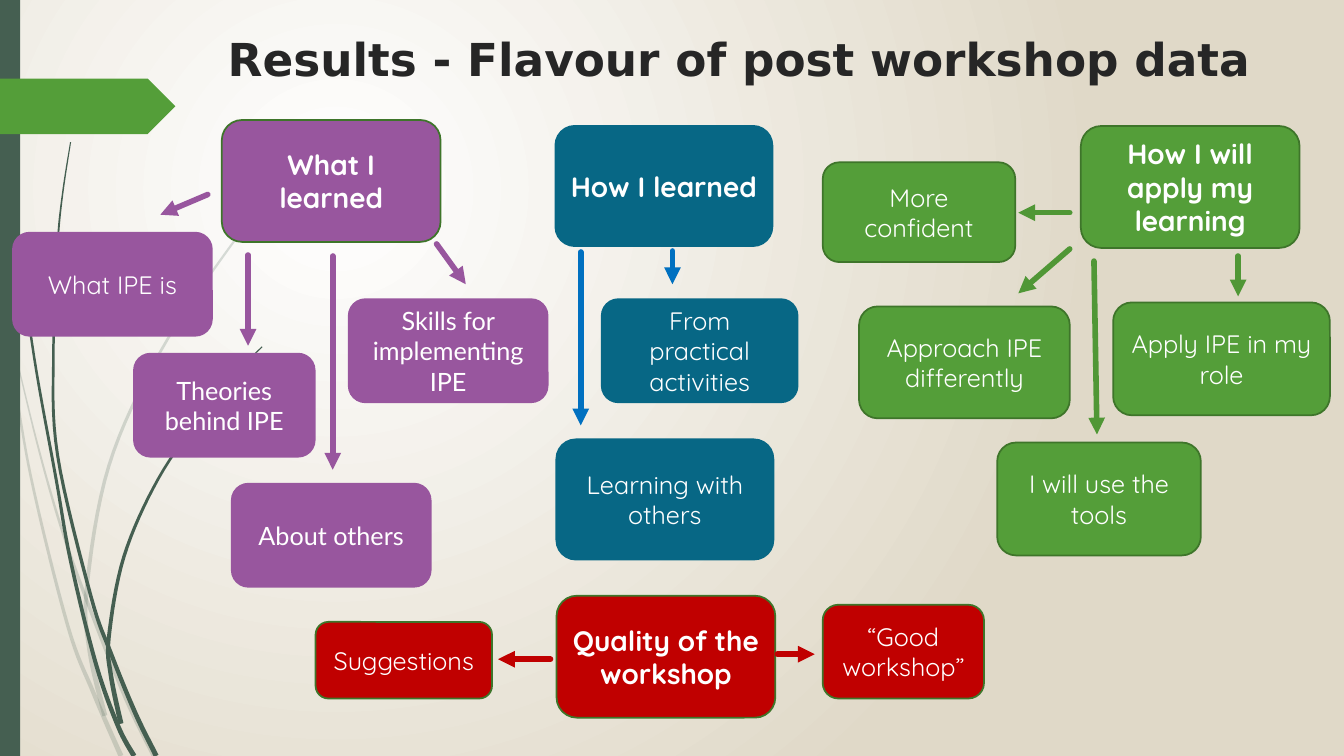
"""Build the slide that maps the themes in the post workshop data."""
from math import hypot

from lxml import etree
from pptx import Presentation
from pptx.dml.color import RGBColor
from pptx.enum.shapes import MSO_CONNECTOR, MSO_SHAPE
from pptx.enum.text import MSO_ANCHOR, PP_ALIGN
from pptx.oxml.ns import qn
from pptx.util import Inches, Pt

ROUND = MSO_SHAPE.ROUNDED_RECTANGLE
RECT = MSO_SHAPE.RECTANGLE
TAG = MSO_SHAPE.PENTAGON
LINE = MSO_CONNECTOR.STRAIGHT
TOP, MIDDLE = MSO_ANCHOR.TOP, MSO_ANCHOR.MIDDLE
CENTER = PP_ALIGN.CENTER

PURPLE, TEAL, GREEN, RED = "98569E", "076785", "549E39", "C00000"
BLUE, LEAF, EDGE, PINE = "0070C0", "509736", "3E752A", "455F51"
WHITE, INK = "FFFFFF", "262626"
SANS, LATO, QUICK = "DejaVu Sans", "Lato", "Quicksand"

HEADS = [
    ("What I learned", 2.2, 1.19, PURPLE, EDGE),
    ("How I learned", 5.5, 1.24, TEAL, None),
    ("How I will apply my learning", 10.72, 1.25, GREEN, EDGE),
    ("Quality of the workshop", 5.52, 5.91, RED, EDGE),
]
THEMES = [
    ("What IPE is", 0.12, 2.3, 1.99, 1.04, PURPLE, None, QUICK),
    ("Theories behind IPE", 1.32, 3.5, 1.81, 1.04, PURPLE, None, LATO),
    ("About others", 2.29, 4.79, 1.99, 1.04, PURPLE, None, LATO),
    ("Skills for implementing IPE", 3.45, 2.96, 1.99, 1.04, PURPLE, None, LATO),
    ("From practical activities", 5.96, 2.96, 1.96, 1.04, TEAL, None, QUICK),
    ("Learning with others", 5.51, 4.35, 2.17, 1.21, TEAL, None, QUICK),
    ("More confident", 8.16, 1.61, 1.91, 0.99, GREEN, EDGE, QUICK),
    ("Approach IPE differently", 8.52, 3.04, 2.09, 1.11, GREEN, EDGE, QUICK),
    ("I will use the tools", 9.89, 4.39, 2.02, 1.12, GREEN, EDGE, QUICK),
    ("Apply IPE in my role", 11.04, 3, 2.15, 1.12, GREEN, EDGE, QUICK),
    ("Suggestions", 3.13, 6.17, 1.75, 0.76, RED, EDGE, QUICK),
    ("“Good workshop”", 8.16, 6, 1.6, 0.93, RED, EDGE, QUICK),
]
ARROWS = {
    PURPLE: [(2.06, 1.93, 1.59, 2.13), (2.46, 2.53, 2.46, 3.43),
             (3.3, 2.54, 3.3, 4.66), (4.33, 2.42, 4.62, 2.82)],
    BLUE: [(6.67, 2.49, 6.67, 2.82), (5.76, 2.5, 5.76, 4.22)],
    LEAF: [(10.61, 2.11, 10.1, 2.11), (10.61, 2.47, 10.1, 2.91),
           (10.85, 2.59, 10.88, 4.31), (12.28, 2.54, 12.28, 2.94)],
    RED: [(5.46, 6.54, 4.94, 6.54), (7.71, 6.49, 8.08, 6.49)],
}
PALE = [
    [(0.14, 3.45), (0.37, 4.4), (0.6, 5.21), (0.87, 5.98), (1.25, 6.93),
     (1.53, 7.5)],
    [(0, 2.9), (0.1, 3.47), (0.3, 4.7), (0.67, 6.2), (0.93, 6.88), (1.2, 7.5)],
    [(3.12, 1.54), (2.68, 1.98), (2.28, 2.45), (1.59, 3.49), (1.08, 4.62),
     (0.86, 5.84), (0.89, 6.46), (1.04, 7.1)],
]
DARK = [
    [(0.04, 0), (0.07, 1.1), (0.18, 2.33), (0.34, 3.55), (0.56, 4.77),
     (0.7, 5.56), (0.95, 6.58), (1.17, 7.2), (1.33, 7.5)],
    [(0.7, 1.41), (0.62, 1.93), (0.57, 2.45), (0.53, 3.49), (0.57, 4.51),
     (0.9, 5.91), (1.1, 6.48), (1.34, 7.07), (1.55, 7.5)],
    [(2.6, 3.44), (2.31, 3.73), (2.04, 4.06), (1.57, 4.75), (1.23, 5.52),
     (1.08, 6.32), (1.1, 6.7), (1.2, 7.18)],
]


def rgb(code):
    return RGBColor.from_string(code)


def curve(knots, steps=8):
    ends = [knots[0], *knots, knots[-1]]
    dots = []
    for a, b, c, d in zip(ends, ends[1:], ends[2:], ends[3:]):
        for step in range(steps):
            t = step / steps
            dots.append(tuple(
                q + t * (r - p) / 2 + t * t * (2 * p - 5 * q + 4 * r - s) / 2
                + t ** 3 * (3 * q - p - 3 * r + s) / 2
                for p, q, r, s in zip(a, b, c, d)))
    return dots + [knots[-1]]


class Board:
    def __init__(self, deck):
        self.slide = deck.slides.add_slide(deck.slide_layouts[6])
        self.shapes = self.slide.shapes

    def back(self, inner, outer):
        fill = self.slide.background.fill
        fill.gradient()
        for stop, code in zip(fill.gradient_stops, (inner, outer)):
            stop.color.rgb = rgb(code)
        grad = self.slide.element.find(".//" + qn("a:gradFill"))
        grad.remove(grad.find(qn("a:lin")))
        glow = etree.SubElement(grad, qn("a:path"), path="circle")
        etree.SubElement(glow, qn("a:fillToRect"),
                         l="50000", t="50000", r="100000", b="100000")

    def paint(self, shape, fill, edge=None):
        shape.shadow.inherit = False
        shape.fill.solid()
        shape.fill.fore_color.rgb = rgb(fill)
        if edge:
            shape.line.color.rgb = rgb(edge)
            shape.line.width = Pt(1.25)
        else:
            shape.line.fill.background()

    def label(self, shape, text, size, font, color, bold, anchor):
        frame = shape.text_frame
        frame.word_wrap = True
        frame.vertical_anchor = anchor
        para = frame.paragraphs[0]
        para.text = text
        para.alignment = CENTER
        para.font.size = Pt(size)
        para.font.name = font
        para.font.bold = bold
        para.font.color.rgb = rgb(color)

    def block(self, kind, x, y, w, h, fill, edge=None):
        shape = self.shapes.add_shape(
            kind, Inches(x), Inches(y), Inches(w), Inches(h))
        self.paint(shape, fill, edge)
        return shape

    def title(self, text, x, y, w, h):
        box = self.shapes.add_textbox(Inches(x), Inches(y), Inches(w), Inches(h))
        self.label(box, text, 32.4, SANS, INK, True, TOP)

    def card(self, text, x, y, w, h, fill, edge, font, size=18, bold=False):
        shape = self.block(ROUND, x, y, w, h, fill, edge)
        self.label(shape, text, size, font, WHITE, bold, MIDDLE)

    def arrow(self, x1, y1, x2, y2, color):
        link = self.shapes.add_connector(
            LINE, Inches(x1), Inches(y1), Inches(x2), Inches(y2))
        link.line.color.rgb = rgb(color)
        link.line.width = Pt(4)
        props = link.element.spPr
        stroke = props.find(qn("a:ln"))
        stroke.set("cap", "rnd")
        etree.SubElement(stroke, qn("a:tailEnd"), type="triangle")
        etree.SubElement(props, qn("a:effectLst"))

    def stalk(self, knots, color, alpha=100):
        dots = curve(knots)
        last = len(dots) - 1
        left, right = [], []
        for i, (x, y) in enumerate(dots):
            (x1, y1), (x2, y2) = dots[max(i - 1, 0)], dots[min(i + 1, last)]
            half = 0.005 + 0.02 * i / last
            scale = half / hypot(x2 - x1, y2 - y1)
            dx, dy = (y2 - y1) * scale, (x1 - x2) * scale
            left.append((Inches(x + dx), Inches(y + dy)))
            right.append((Inches(x - dx), Inches(y - dy)))
        rim = left + right[::-1]
        pen = self.shapes.build_freeform(*rim[0])
        pen.add_line_segments(rim[1:], close=True)
        shape = pen.convert_to_shape()
        self.paint(shape, color)
        tone = shape.element.spPr.find(qn("a:solidFill"))[0]
        etree.SubElement(tone, qn("a:alpha"), val=str(alpha * 1000))


def main():
    deck = Presentation()
    deck.slide_width, deck.slide_height = Inches(13.33), Inches(7.5)
    board = Board(deck)
    board.back(WHITE, "E0D9C8")
    for knots in PALE:
        board.stalk(knots, PINE, 20)
    for knots in DARK:
        board.stalk(knots, PINE)
    board.block(RECT, 0, 0, 0.2, 7.5, PINE)
    board.block(TAG, 0, 0.78, 1.74, 0.55, GREEN)
    board.title("Results - Flavour of post workshop data", 2.06, 0.26, 10.54, 0.95)
    for text, x, y, fill, edge in HEADS:
        board.card(text, x, y, 2.17, 1.21, fill, edge, QUICK, 20, True)
    for theme in THEMES:
        board.card(*theme)
    for color, links in ARROWS.items():
        for link in links:
            board.arrow(*link, color)
    deck.save("out.pptx")


if __name__ == "__main__":
    main()
